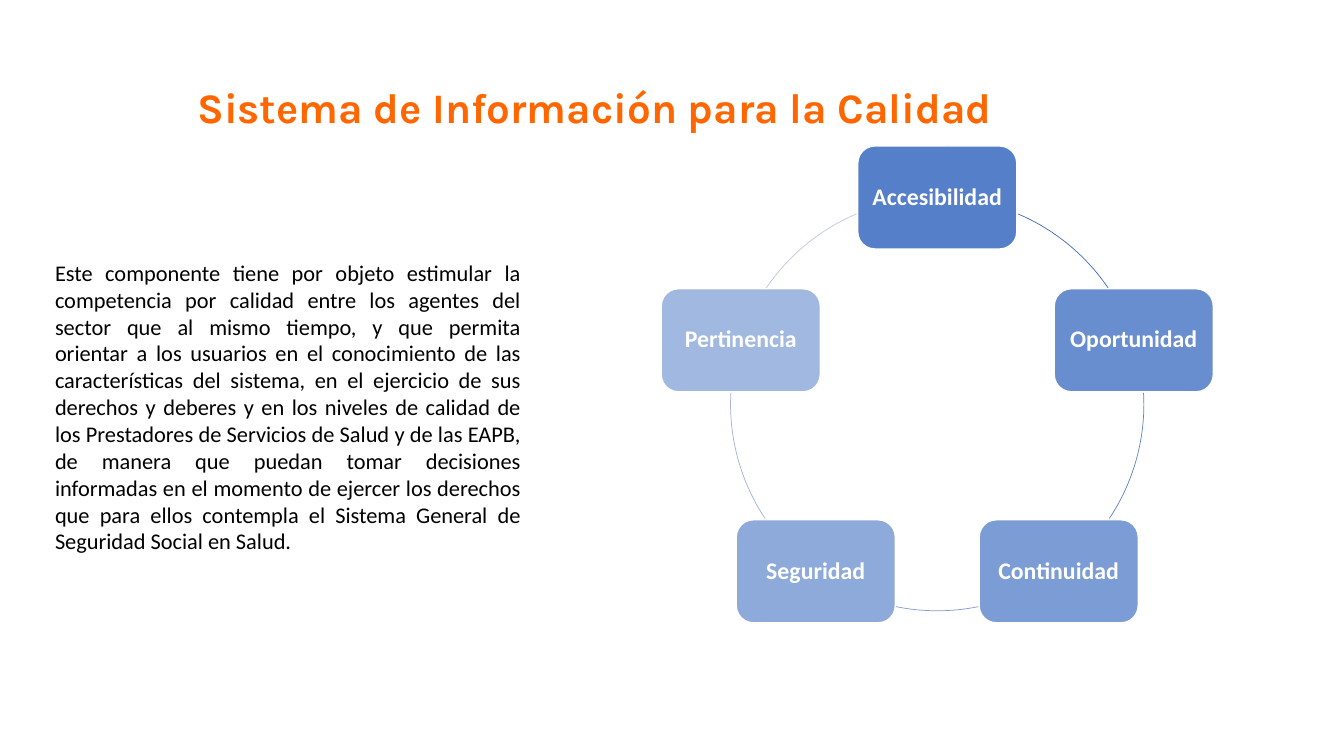
from dataclasses import dataclass
from math import cos, radians, sin

from lxml import etree
from pptx import Presentation
from pptx.dml.color import RGBColor
from pptx.enum.shapes import MSO_SHAPE
from pptx.enum.text import MSO_ANCHOR, MSO_AUTO_SIZE, PP_ALIGN
from pptx.oxml.ns import qn
from pptx.util import Pt

ARC, ROUNDED = MSO_SHAPE.ARC, MSO_SHAPE.ROUNDED_RECTANGLE
TOP, MIDDLE = MSO_ANCHOR.TOP, MSO_ANCHOR.MIDDLE
CENTER, JUSTIFY = PP_ALIGN.CENTER, PP_ALIGN.JUSTIFY
NO_AUTOFIT = MSO_AUTO_SIZE.NONE
TITLE_ONLY = 5


@dataclass(frozen=True)
class Theme:
    title_font: str = "Karla"
    body_font: str = "Calibri"
    title_size: float = 30
    body_size: float = 16
    node_size: float = 17
    title_color: str = "FF6600"
    body_color: str = "000000"
    node_fill: str = "4472C4"
    white: str = "FFFFFF"


def write(frame, text, *, font, size, color, bold=False, align=CENTER,
          anchor=TOP, insets=(7.2, 3.6), spacing=None):
    frame.word_wrap = True
    frame.auto_size = NO_AUTOFIT
    frame.vertical_anchor = anchor
    frame.margin_left = frame.margin_right = Pt(insets[0])
    frame.margin_top = frame.margin_bottom = Pt(insets[1])
    paragraph = frame.paragraphs[0]
    paragraph.alignment = align
    if spacing:
        paragraph.line_spacing = spacing
    run = paragraph.add_run()
    run.text = text
    run.font.name, run.font.size, run.font.bold = font, Pt(size), bold
    run.font.color.rgb = RGBColor.from_string(color)


class SlideBuilder:
    def __init__(self, slide, theme):
        self.slide, self.theme = slide, theme

    def title(self, text, left, top, width, height):
        title = self.slide.shapes.title
        title.left, title.top = Pt(left), Pt(top)
        title.width, title.height = Pt(width), Pt(height)
        write(title.text_frame, text, font=self.theme.title_font,
              size=self.theme.title_size, color=self.theme.title_color, bold=True)

    def body(self, text, left, top, width, height):
        box = self.slide.shapes.add_textbox(Pt(left), Pt(top), Pt(width), Pt(height))
        write(box.text_frame, text, font=self.theme.body_font,
              size=self.theme.body_size, color=self.theme.body_color, align=JUSTIFY)

    def shape(self, kind, center_x, center_y, width, height, line, line_width):
        shape = self.slide.shapes.add_shape(
            kind, Pt(center_x - width / 2), Pt(center_y - height / 2),
            Pt(width), Pt(height))
        shape.shadow.inherit = False
        shape.line.color.rgb = RGBColor.from_string(line)
        shape.line.width = Pt(line_width)
        return shape

    def node(self, text, center_x, center_y, width, height, opacity):
        node = self.shape(ROUNDED, center_x, center_y, width, height, self.theme.white, 1)
        node.fill.solid()
        node.fill.fore_color.rgb = RGBColor.from_string(self.theme.node_fill)
        # Opacity of the fill, in thousandths of a percent
        color = node.fill._xPr.find(qn("a:solidFill"))[0]
        etree.SubElement(color, qn("a:alpha")).set("val", str(opacity * 1000))
        # The rounded corners already inset the text area
        write(node.text_frame, text, font=self.theme.body_font,
              size=self.theme.node_size, color=self.theme.white, bold=True,
              anchor=MIDDLE, insets=(3.6, 3.6), spacing=0.9)

    def arc(self, center_x, center_y, radius, start, end, color):
        arc = self.shape(ARC, center_x, center_y, 2 * radius, 2 * radius, color, 0.5)
        arc.fill.background()
        # 60000 units per degree, over the 100000 of an adjustment
        for index, angle in enumerate((start, end)):
            arc.adjustments[index] = angle % 360 * 0.6


def main():
    presentation = Presentation()
    presentation.slide_width, presentation.slide_height = Pt(960), Pt(540)
    slide = presentation.slides.add_slide(presentation.slide_layouts[TITLE_ONLY])
    builder = SlideBuilder(slide, Theme())

    # Title and description
    builder.title("Sistema de Información para la Calidad", 105.8, 54.7, 638, 77.8)
    builder.body(
        "Este componente tiene por objeto estimular la competencia por calidad "
        "entre los agentes del sector que al mismo tiempo, y que permita orientar "
        "a los usuarios en el conocimiento de las características del sistema, en "
        "el ejercicio de sus derechos y deberes y en los niveles de calidad de los "
        "Prestadores de Servicios de Salud y de las EAPB, de manera que puedan "
        "tomar decisiones informadas en el momento de ejercer los derechos que "
        "para ellos contempla el Sistema General de Seguridad Social en Salud.",
        32.2, 181.4, 347, 259)

    # Ring of quality attributes: name, then colour and angles of the next arc
    ring_x, ring_y, radius = 669.5, 288.7, 147.6
    attributes = [
        ("Accesibilidad", "416DBB", -67, -34.2),
        ("Oportunidad", "6182C5", -3.1, 33.6),
        ("Continuidad", "8299CE", 78.5, 101.5),
        ("Seguridad", "A2B1D9", 146.4, 183.1),
        ("Pertinencia", "C1C9E4", 214.2, 247),
    ]
    step = 360 / len(attributes)
    for index, (name, arc_color, start, end) in enumerate(attributes):
        angle = radians(index * step - 90)
        builder.node(name, ring_x + radius * cos(angle), ring_y + radius * sin(angle),
                     113.6, 73.6, opacity=90 - 10 * index)
        builder.arc(ring_x, ring_y, radius, start, end, arc_color)

    presentation.save("out.pptx")


if __name__ == "__main__":
    main()
